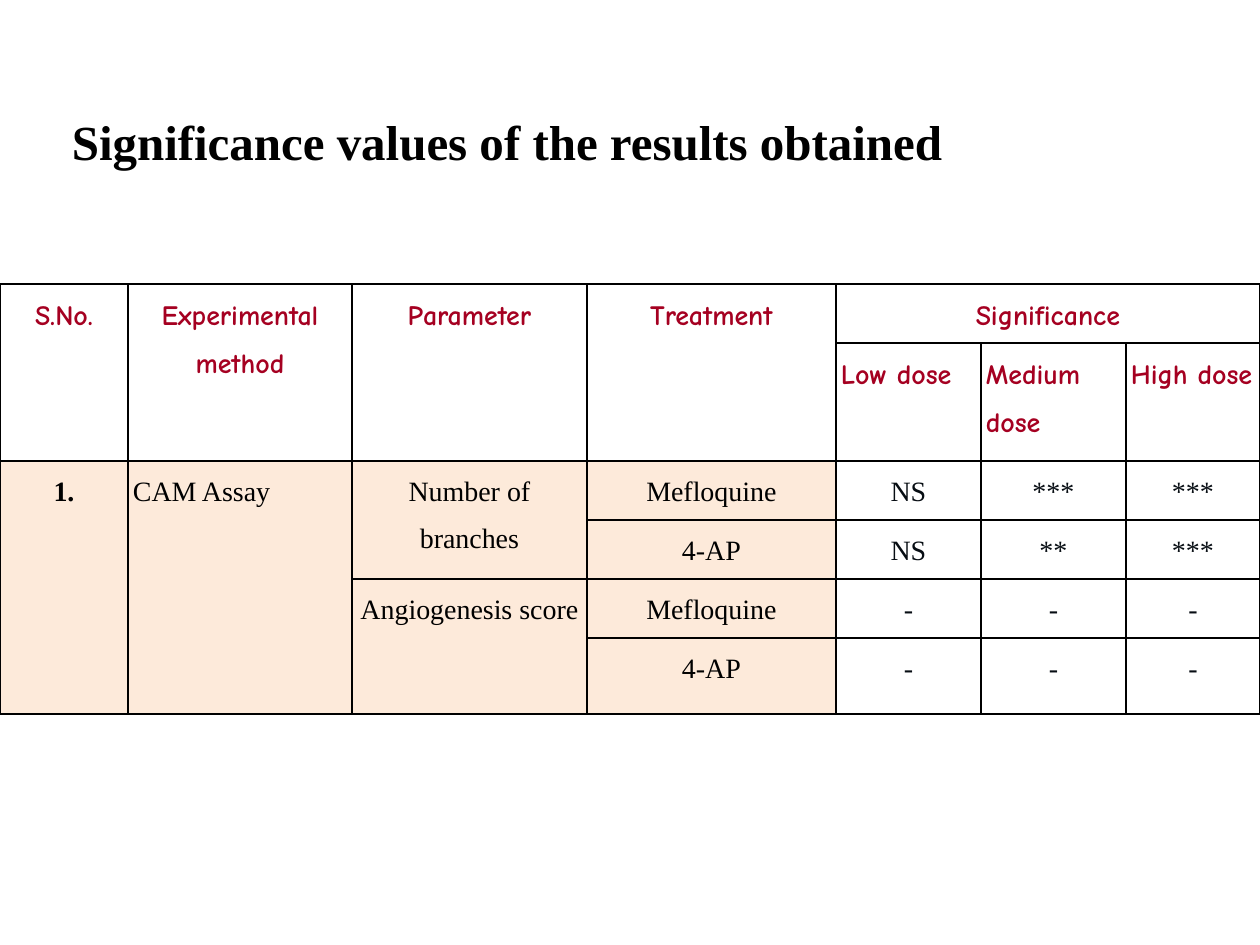
from lxml.etree import SubElement as Sub
from pptx import Presentation
from pptx.dml.color import RGBColor as Rgb
from pptx.enum.text import MSO_AUTO_SIZE as Auto, MSO_ANCHOR as Anchor, PP_ALIGN as Align
from pptx.oxml.ns import qn
from pptx.util import Emu, Pt

INK = {"black": "000000", "red": "A50021", "navy": "070D13",
       "white": "FFFFFF", "peach": "FDEADA"}
SERIF, HAND = "Times New Roman", "Comic Neue"
SCALE = 914400 / 126

COLS = [128, 224, 235, 249, 145, 145, 134]
ROWS = [59, 118, 59, 59, 59, 76]
CELLS = [
    ["S.No.", "Experimental method", "Parameter", "Treatment", "Significance", "", ""],
    ["", "", "", "", "Low dose", "Medium dose", "High dose"],
    ["1.", "CAM Assay", "Number of branches", "Mefloquine", "NS", "***", "***"],
    ["", "", "", "4-AP", "NS", "**", "***"],
    ["", "", "Angiogenesis score", "Mefloquine", "-", "-", "-"],
    ["", "", "", "4-AP", "-", "-", "-"],
]
SPANS = [(0, col, 1, col) for col in range(4)] + [
    (0, 4, 0, 6), (2, 0, 5, 0), (2, 1, 5, 1), (2, 2, 3, 2), (4, 2, 5, 2)]
HEADS, DOSES = 2, 4


def px(num):
    return Emu(round(num * SCALE))


class Deck:
    def __init__(self, wide, high):
        self.show = Presentation()
        self.show.slide_width, self.show.slide_height = px(wide), px(high)
        self.slide = self.show.slides.add_slide(self.show.slide_layouts[5])

    def run(self, para, text, size, font, ink, bold):
        run = para.add_run()
        run.text = text
        run.font.size, run.font.name, run.font.bold = Pt(size), font, bold
        run.font.color.rgb = Rgb.from_string(INK[ink])

    def title(self, text, left, top, wide, high):
        box = self.slide.shapes.title
        box.left, box.top, box.width, box.height = map(px, (left, top, wide, high))
        frame = box.text_frame
        frame.word_wrap = True
        frame.auto_size = Auto.SHAPE_TO_FIT_TEXT
        frame.vertical_anchor = Anchor.TOP
        para = frame.paragraphs[0]
        para.alignment = Align.CENTER
        self.run(para, text, 28, SERIF, "black", True)

    def edge(self, cell):
        props = cell._tc.get_or_add_tcPr()
        for side in "LRTB":
            line = Sub(props, qn(f"a:ln{side}"), w=str(Pt(1)))
            fill = Sub(line, qn("a:solidFill"))
            Sub(fill, qn("a:srgbClr"), val=INK["black"])

    def cell(self, cell, text, fill, font, ink, bold, align):
        cell.margin_left = cell.margin_right = px(5)
        cell.margin_top = cell.margin_bottom = 0
        self.edge(cell)
        cell.fill.solid()
        cell.fill.fore_color.rgb = Rgb.from_string(INK[fill])
        if text:
            para = cell.text_frame.paragraphs[0]
            para.alignment, para.line_spacing = align, 1.5
            self.run(para, text, 16, font, ink, bold)

    def table(self, left, top):
        grid = self.slide.shapes.add_table(
            len(ROWS), len(COLS), px(left), px(top), px(sum(COLS)), px(sum(ROWS))).table
        for col, wide in zip(grid.columns, COLS):
            col.width = px(wide)
        for row, high in zip(grid.rows, ROWS):
            row.height = px(high)
        for top, left, low, right in SPANS:
            grid.cell(top, left).merge(grid.cell(low, right))
        for row, texts in enumerate(CELLS):
            for col, text in enumerate(texts):
                head, dose = row < HEADS, col >= DOSES
                fill = "white" if head or dose else "peach"
                ink = "red" if head else "navy" if dose else "black"
                flush = row == 1 or (not head and col == 1)
                self.cell(grid.cell(row, col), text, fill, HAND if head else SERIF, ink,
                          head or col == 0, Align.LEFT if flush else Align.CENTER)


def main():
    deck = Deck(1260, 945)
    deck.title("Significance values of the results obtained", 0, 105, 1014, 72)
    deck.table(0, 284)
    deck.show.save("out.pptx")


if __name__ == "__main__":
    main()
